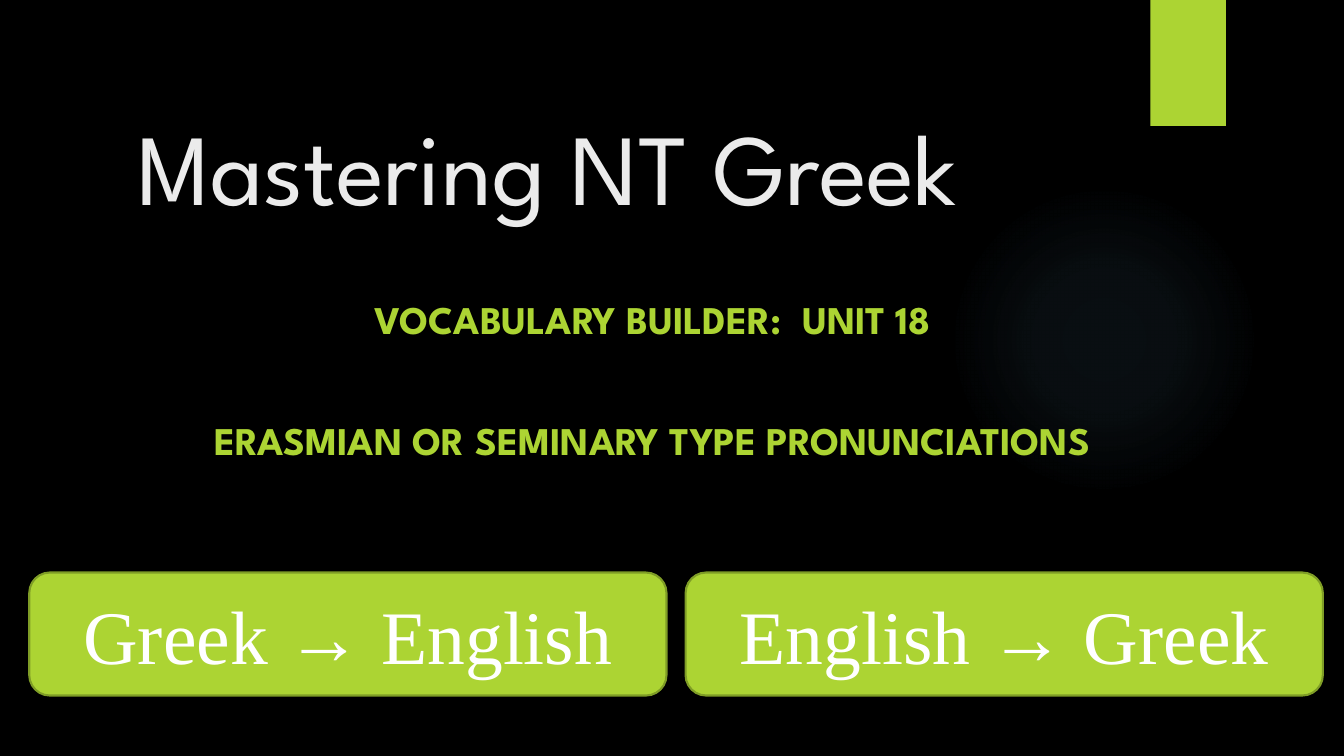
from lxml import etree
from pptx import Presentation
from pptx.dml.color import RGBColor
from pptx.enum import shapes, text
from pptx.oxml import ns
from pptx.util import Inches, Pt

TITLE = "Mastering NT Greek"
SUBTITLES = ["VOCABULARY BUILDER:  UNIT 18", "ERASMIAN OR SEMINARY TYPE PRONUNCIATIONS"]
BUTTONS = ["Greek → English", "English → Greek"]
GLOW_STOPS = [(0, 7), (36, 6), (69, 0)]

BLACK = RGBColor(0x00, 0x00, 0x00)
WHITE = RGBColor(0xFF, 0xFF, 0xFF)
PALE = RGBColor(0xEB, 0xEB, 0xEB)
LIME = RGBColor(0xAC, 0xD4, 0x33)
OLIVE = RGBColor(0x7F, 0x9D, 0x26)
SKY = RGBColor(0x7A, 0xC4, 0xF0)
HEADING_FONT = "League Spartan"
BUTTON_FONT = "Times New Roman"

BUTTON_LEFT, BUTTON_TOP = 0.29, 5.68
BUTTON_WIDTH, BUTTON_HEIGHT, BUTTON_GAP = 6.32, 1.22, 0.19


def add_shape(page, kind, left, top, width, height):
    shape = page.shapes.add_shape(kind, Inches(left), Inches(top), Inches(width), Inches(height))
    shape.shadow.inherit = False
    shape.fill.solid()
    shape.fill.fore_color.rgb = LIME
    shape.line.fill.background()
    return shape


def set_font(para, name, size, color, bold=False):
    para.font.name = name
    para.font.size = Pt(size)
    para.font.color.rgb = color
    para.font.bold = bold


def add_glow(page):
    glow = add_shape(page, shapes.MSO_SHAPE.OVAL, 9.41, 1.83, 3.08, 3.08)
    stops = "".join(
        f'<a:gs pos="{place * 1000}"><a:srgbClr val="{SKY}">'
        f'<a:alpha val="{alpha * 1000}"/></a:srgbClr></a:gs>'
        for place, alpha in GLOW_STOPS
    )
    gradient = etree.fromstring(
        f'<a:gradFill {ns.nsdecls("a")} rotWithShape="1"><a:gsLst>{stops}</a:gsLst>'
        '<a:path path="circle"><a:fillToRect l="50000" t="50000" r="50000" b="50000"/>'
        "</a:path></a:gradFill>"
    )
    properties = glow.element.spPr
    properties.replace(properties.find(ns.qn("a:solidFill")), gradient)


def add_title(page):
    title = page.shapes.title
    title.left, title.top = Inches(1.26), Inches(0.7)
    title.width, title.height = Inches(10.04), Inches(1.59)
    title.text_frame.text = TITLE
    title.text_frame.vertical_anchor = text.MSO_ANCHOR.BOTTOM
    para = title.text_frame.paragraphs[0]
    para.alignment = text.PP_ALIGN.LEFT
    set_font(para, HEADING_FONT, 72, PALE)


def add_subtitles(page):
    box = page.shapes.add_textbox(Inches(0.78), Inches(2.88), Inches(11.38), Inches(2.69))
    frame = box.text_frame
    frame.word_wrap = True
    frame.text = "\n".join(SUBTITLES)
    for index, para in enumerate(frame.paragraphs):
        para.alignment = text.PP_ALIGN.CENTER
        if index:
            para.space_before = Pt(53)
        set_font(para, HEADING_FONT, 28, LIME, bold=True)


def add_buttons(page):
    for index, label in enumerate(BUTTONS):
        left = BUTTON_LEFT + index * (BUTTON_WIDTH + BUTTON_GAP)
        button = add_shape(page, shapes.MSO_SHAPE.ROUNDED_RECTANGLE,
                           left, BUTTON_TOP, BUTTON_WIDTH, BUTTON_HEIGHT)
        button.line.color.rgb = OLIVE
        button.line.width = Pt(1.5)
        button.text_frame.text = label
        button.text_frame.vertical_anchor = text.MSO_ANCHOR.MIDDLE
        para = button.text_frame.paragraphs[0]
        para.alignment = text.PP_ALIGN.CENTER
        set_font(para, BUTTON_FONT, 54, WHITE)


def main():
    deck = Presentation()
    deck.slide_width, deck.slide_height = Inches(13.33), Inches(7.5)
    page = deck.slides.add_slide(deck.slide_layouts[5])
    page.background.fill.solid()
    page.background.fill.fore_color.rgb = BLACK
    add_glow(page)
    add_shape(page, shapes.MSO_SHAPE.RECTANGLE, 11.41, 0, 0.75, 1.25)
    add_title(page)
    add_subtitles(page)
    add_buttons(page)
    deck.save("out.pptx")


if __name__ == "__main__":
    main()
